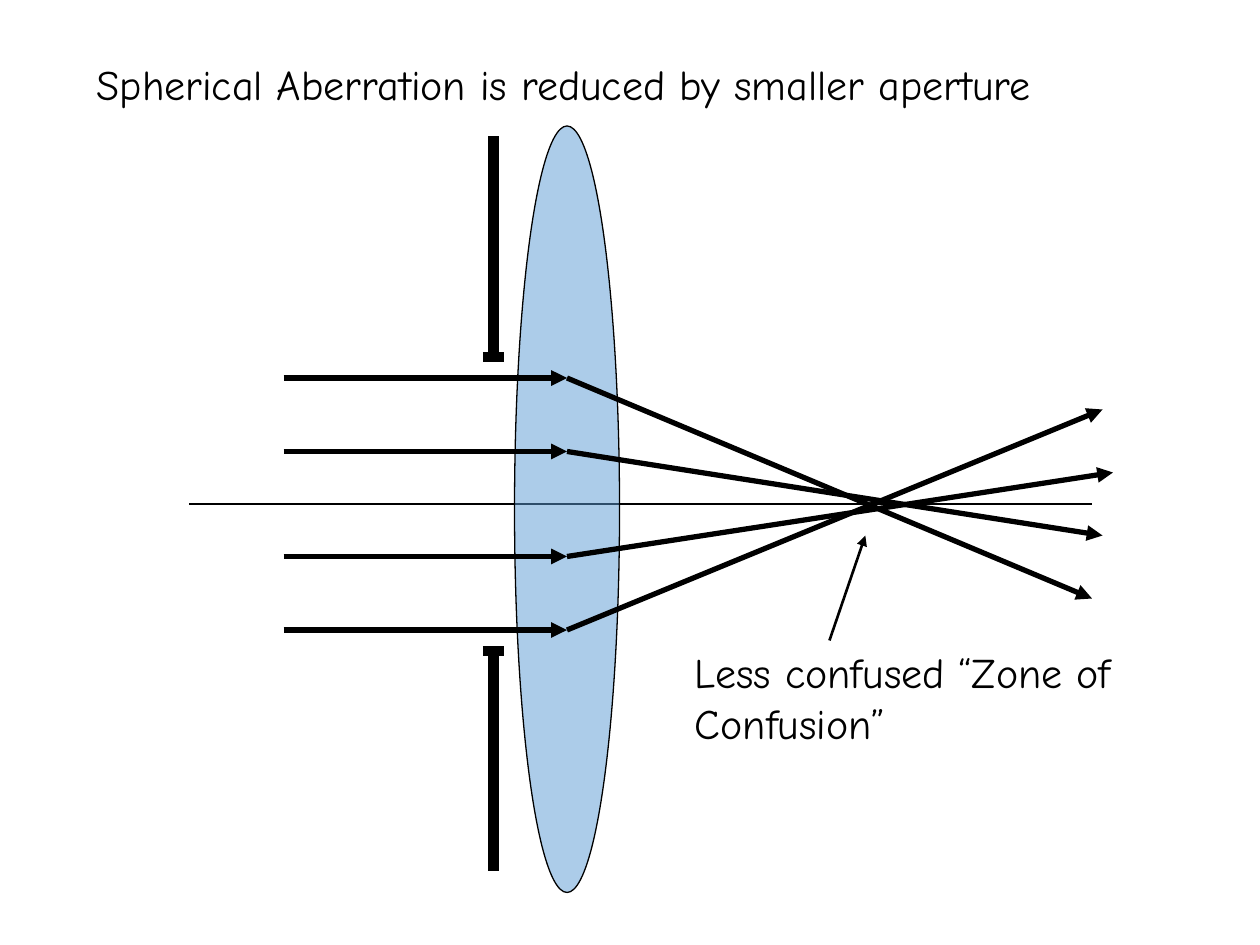
from dataclasses import dataclass

from lxml import etree
from pptx import Presentation
from pptx.dml.color import RGBColor
from pptx.enum.shapes import MSO_CONNECTOR, MSO_SHAPE
from pptx.enum.text import MSO_ANCHOR, MSO_AUTO_SIZE, PP_ALIGN
from pptx.oxml.ns import qn
from pptx.shapes.autoshape import Shape
from pptx.slide import Slide
from pptx.util import Pt

STRAIGHT = MSO_CONNECTOR.STRAIGHT
OVAL = MSO_SHAPE.OVAL
TOP = MSO_ANCHOR.TOP
NO_AUTOFIT = MSO_AUTO_SIZE.NONE
LEFT = PP_ALIGN.LEFT

BLACK = RGBColor(0x00, 0x00, 0x00)
LENS_BLUE = RGBColor(0x5B, 0x9B, 0xD5)
LENS_ALPHA = "50000"

FRAME_FORMAT = {"word_wrap": True, "auto_size": NO_AUTOFIT, "vertical_anchor": TOP}
FONT_FORMAT = {"name": "Comic Neue", "size": Pt(24), "bold": False}

AXIS_Y = 288
SOURCE_X = 162
LENS_X = 324
STOP_X = 282
STOP_HALF_WIDTH = 6
STOP_GAP = 84
STOP_LENGTH = 126


@dataclass(frozen=True)
class Line:
    start: tuple[float, float]
    end: tuple[float, float]
    width: float
    arrow: bool = False


@dataclass(frozen=True)
class Ray:
    height: float
    end: tuple[float, float]


RAYS = (
    Ray(318, (636, 270)),
    Ray(258, (630, 306)),
    Ray(216, (624, 342)),
    Ray(360, (630, 234)),
)


def draw_line(slide: Slide, line: Line) -> None:
    points = (Pt(value) for value in (*line.start, *line.end))
    connector = slide.shapes.add_connector(STRAIGHT, *points)
    connector.line.color.rgb = BLACK
    connector.line.width = Pt(line.width)
    if line.arrow:
        outline = connector.line._get_or_add_ln()
        etree.SubElement(outline, qn("a:tailEnd"), type="triangle")
    etree.SubElement(connector._element.spPr, qn("a:effectLst"))


def draw_lens(slide: Slide) -> None:
    lens = slide.shapes.add_shape(OVAL, Pt(294), Pt(72), Pt(60), Pt(438))
    lens.shadow.inherit = False
    lens.fill.solid()
    lens.fill.fore_color.rgb = LENS_BLUE
    color = lens._element.spPr.find(qn("a:solidFill"))[0]
    etree.SubElement(color, qn("a:alpha"), val=LENS_ALPHA)
    lens.line.color.rgb = BLACK
    lens.line.width = Pt(0.75)


def draw_ray(slide: Slide, ray: Ray) -> None:
    bend = (LENS_X, ray.height)
    draw_line(slide, Line((SOURCE_X, ray.height), bend, 3, True))
    draw_line(slide, Line(bend, ray.end, 3, True))


def draw_stop(slide: Slide, direction: int) -> None:
    edge = AXIS_Y + direction * STOP_GAP
    outer = edge + direction * STOP_LENGTH
    left, right = STOP_X - STOP_HALF_WIDTH, STOP_X + STOP_HALF_WIDTH
    draw_line(slide, Line((left, edge), (right, edge), 6))
    draw_line(slide, Line((STOP_X, edge), (STOP_X, outer), 6))


def write_text(shape: Shape, text: str) -> None:
    frame = shape.text_frame
    frame.text = text
    for name, value in FRAME_FORMAT.items():
        setattr(frame, name, value)
    paragraph = frame.paragraphs[0]
    paragraph.alignment = LEFT
    font = paragraph.runs[0].font
    for name, value in FONT_FORMAT.items():
        setattr(font, name, value)
    font.color.rgb = BLACK


def main() -> None:
    presentation = Presentation()
    presentation.slide_width = Pt(720)
    presentation.slide_height = Pt(540)
    slide = presentation.slides.add_slide(presentation.slide_layouts[5])

    title = slide.shapes.title
    title.left, title.top, title.width, title.height = Pt(48), Pt(30), Pt(612), Pt(120)
    write_text(title, "Spherical Aberration is reduced by smaller aperture")

    draw_line(slide, Line((108, AXIS_Y), (624, AXIS_Y), 0.75))
    draw_lens(slide)
    for ray in RAYS:
        draw_ray(slide, ray)

    caption = slide.shapes.add_textbox(Pt(390), Pt(366), Pt(264), Pt(74))
    write_text(caption, "Less confused “Zone of Confusion”")
    draw_line(slide, Line((474, 366), (494.5, 306), 1.5, True))

    for direction in (-1, 1):
        draw_stop(slide, direction)

    presentation.save("out.pptx")


if __name__ == "__main__":
    main()
